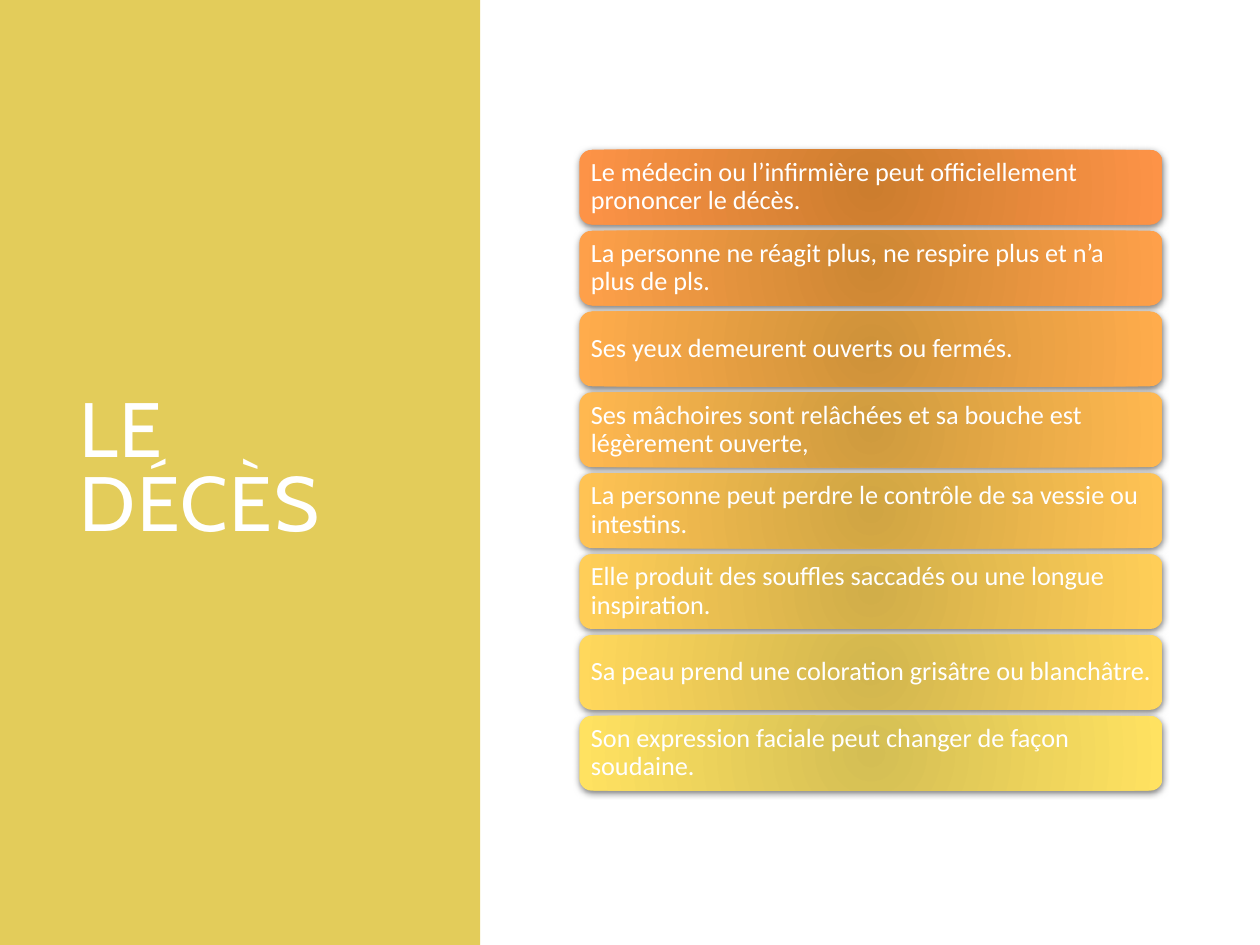
import dataclasses

import pptx
import pptx.dml.color
import pptx.enum.shapes
import pptx.enum.text
import pptx.oxml
import pptx.oxml.ns
import pptx.util

Cm = pptx.util.Cm
Pt = pptx.util.Pt
RGB = pptx.dml.color.RGBColor.from_string
qn = pptx.oxml.ns.qn
NS = pptx.oxml.ns.nsdecls("a")
SHAPE = pptx.enum.shapes.MSO_SHAPE
TEXT = pptx.enum.text


@dataclasses.dataclass(frozen=True)
class Theme:
    """Colours, fonts and type sizes of the slide."""
    panel: str = "E3CC5A"
    ink: str = "FFFFFF"
    head: str = "Cabin"
    body: str = "Calibri"
    big: int = 44
    small: int = 15


THEME = Theme()

SIGNS = [
    ("Le médecin ou l’infirmière peut officiellement prononcer le décès.", "CC7D2E", "FD9347"),
    ("La personne ne réagit plus, ne respire plus et n’a plus de pls.", "CD8733", "FEA04A"),
    ("Ses yeux demeurent ouverts ou fermés.", "CE9239", "FFAC4C"),
    ("Ses mâchoires sont relâchées et sa bouche est légèrement ouverte,", "CF9B3E", "FFB850"),
    ("La personne peut perdre le contrôle de sa vessie ou intestins.", "D0A543", "FFC354"),
    ("Elle produit des souffles saccadés ou une longue inspiration.", "D1AE49", "FFCE58"),
    ("Sa peau prend une coloration grisâtre ou blanchâtre.", "D2B64E", "FFD85C"),
    ("Son expression faciale peut changer de façon soudaine.", "D4BE54", "FFE261"),
]


def write(shape, text, face, size, lead):
    """Set left-aligned, vertically centred text in a shape."""
    frame = shape.text_frame
    frame.text = text
    frame.word_wrap = True
    frame.auto_size = TEXT.MSO_AUTO_SIZE.NONE
    frame.vertical_anchor = TEXT.MSO_ANCHOR.MIDDLE
    para = frame.paragraphs[0]
    para.alignment = TEXT.PP_ALIGN.LEFT
    para.line_spacing = lead
    font = para.runs[0].font
    font.name, font.size = face, Pt(size)
    font.color.rgb = RGB(THEME.ink)


def glow(shape, inner, outer):
    """Fill a shape with a radial gradient from inner to outer."""
    shape.fill.gradient()
    for stop, tint, place in zip(shape.fill.gradient_stops, (inner, outer), (0, 1)):
        stop.color.rgb = RGB(tint)
        stop.position = place
    line = shape.element.spPr.find(".//" + qn("a:lin"))
    ring = pptx.oxml.parse_xml(
        f'<a:path {NS} path="circle">'
        '<a:fillToRect l="100000" t="100000" r="100000" b="100000"/></a:path>')
    line.getparent().replace(line, ring)


def shade(shape):
    """Give a shape a soft shadow below it."""
    shape.shadow.inherit = False
    drop = pptx.oxml.parse_xml(
        f'<a:outerShdw {NS} blurRad="{Pt(4)}" dist="{Pt(1)}" dir="5400000" rotWithShape="0">'
        '<a:srgbClr val="000000"><a:alpha val="50000"/></a:srgbClr></a:outerShdw>')
    shape.element.spPr.find(qn("a:effectLst")).append(drop)


def side(slide, left, top, width, height):
    """Draw the coloured panel with the slide title on it."""
    panel = slide.shapes.add_shape(SHAPE.RECTANGLE, left, top, width, height)
    panel.shadow.inherit = False
    panel.fill.solid()
    panel.fill.fore_color.rgb = RGB(THEME.panel)
    panel.line.fill.background()
    title = slide.shapes.title
    title.element.addprevious(panel.element)
    title.left, title.top = left + Cm(1.35), top + Cm(1.78)
    title.width, title.height = Cm(7.11), height - Cm(3.58)
    write(title, "LE DÉCÈS", THEME.head, THEME.big, 0.8)
    title.element.find(".//" + qn("a:rPr")).set("spc", "100")


def stack(slide, left, top, width, height):
    """Stack one rounded card per sign in the given box."""
    group = slide.shapes.add_group_shape()
    gap = Cm(0.12)
    tall = (height - gap * (len(SIGNS) - 1)) // len(SIGNS)
    for row, (text, inner, outer) in enumerate(SIGNS):
        card = group.shapes.add_shape(
            SHAPE.ROUNDED_RECTANGLE, left, top + row * (tall + gap), width, tall)
        glow(card, inner, outer)
        card.line.fill.background()
        shade(card)
        write(card, text, THEME.body, THEME.small, 0.9)
        frame = card.text_frame
        frame.margin_left = frame.margin_right = Cm(0.16)
        frame.margin_top = frame.margin_bottom = Cm(0.16)


def main():
    """Build and save the slide."""
    deck = pptx.Presentation()
    deck.slide_width, deck.slide_height = Cm(25.4), Cm(19.05)
    slide = deck.slides.add_slide(deck.slide_layouts[5])
    side(slide, 0, 0, Cm(9.68), deck.slide_height)
    stack(slide, Cm(11.68), Cm(3.02), Cm(11.76), Cm(12.92))
    deck.save("out.pptx")


if __name__ == "__main__":
    main()
